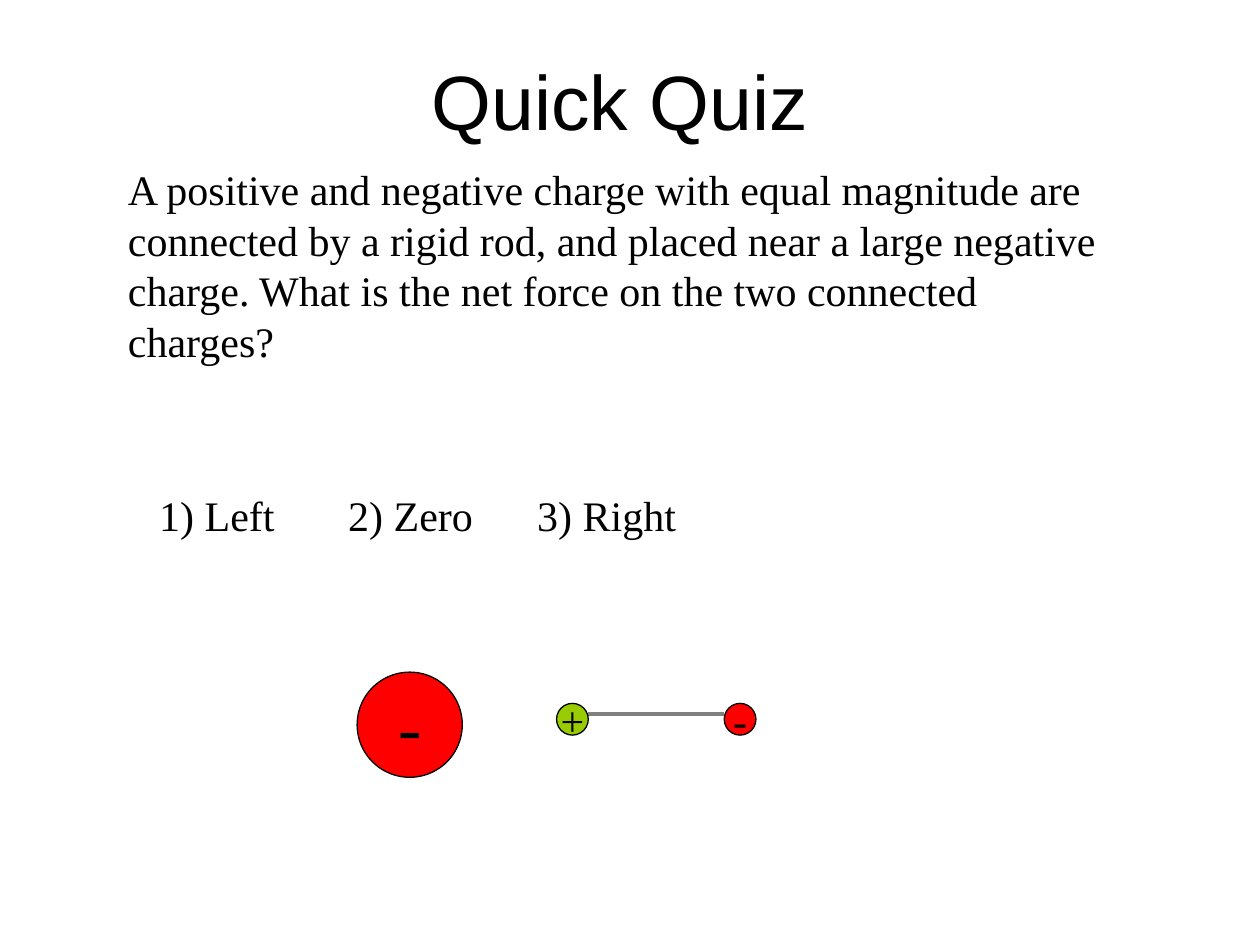
from lxml import etree
from pptx import Presentation
from pptx.dml.color import RGBColor
from pptx.enum.shapes import MSO_CONNECTOR, MSO_SHAPE
from pptx.enum.text import MSO_ANCHOR, PP_ALIGN
from pptx.oxml.ns import qn
from pptx.util import Cm, Pt

BLACK = RGBColor(0x00, 0x00, 0x00)
GRAY = RGBColor(0x80, 0x80, 0x80)
RED = RGBColor(0xFF, 0x00, 0x00)
GREEN = RGBColor(0x99, 0xCC, 0x00)

STRAIGHT = MSO_CONNECTOR.STRAIGHT
OVAL = MSO_SHAPE.OVAL
LEFT, CENTER = PP_ALIGN.LEFT, PP_ALIGN.CENTER
TOP, MIDDLE = MSO_ANCHOR.TOP, MSO_ANCHOR.MIDDLE

HEADING_FONT = "Arial"
BODY_FONT = "Times New Roman"


class QuizSlide:
    """Adds styled elements to one slide; lengths are in centimetres."""

    def __init__(self, slide):
        self.shapes = slide.shapes

    def fill_text(self, tf, text, size, font=BODY_FONT, align=LEFT, anchor=TOP, wrap=True):
        tf.word_wrap = wrap
        tf.vertical_anchor = anchor
        p = tf.paragraphs[0]
        p.alignment = align
        r = p.add_run()
        r.text = text
        r.font.size = Pt(size)
        r.font.name = font
        r.font.color.rgb = BLACK

    def text(self, x, y, w, h, text, size=24, **style):
        sp = self.shapes.add_textbox(Cm(x), Cm(y), Cm(w), Cm(h))
        self.fill_text(sp.text_frame, text, size, **style)

    def charge(self, x, y, d, sign, color, size=24):
        sp = self.shapes.add_shape(OVAL, Cm(x), Cm(y), Cm(d), Cm(d))
        sp.shadow.inherit = False
        sp.fill.solid()
        sp.fill.fore_color.rgb = color
        sp.line.color.rgb = BLACK
        sp.line.width = Pt(0.75)
        self.fill_text(sp.text_frame, sign, size, align=CENTER, anchor=MIDDLE, wrap=False)

    def rod(self, x1, x2, y):
        ln = self.shapes.add_connector(STRAIGHT, Cm(x1), Cm(y), Cm(x2), Cm(y))
        ln.line.color.rgb = GRAY
        ln.line.width = Pt(2.25)
        etree.SubElement(ln._element.spPr, qn("a:effectLst"))


def main():
    prs = Presentation()
    prs.slide_width, prs.slide_height = Cm(25.4), Cm(19.05)
    s = QuizSlide(prs.slides.add_slide(prs.slide_layouts[6]))

    s.text(1.7, 0.43, 21.59, 3.18, "Quick Quiz", 44,
           font=HEADING_FONT, align=CENTER, anchor=MIDDLE)

    small, rod_start, rod_end = 0.64, 11.86, 14.6
    s.rod(rod_start, rod_end, 14.4)
    s.charge(rod_start - small, 14.18, small, "+", GREEN)
    s.charge(rod_end, 14.18, small, "-", RED)
    s.charge(7.2, 13.55, 2.12, "-", RED, 40)

    s.text(2.33, 3.18, 20.32, 4.3,
           "A positive and negative charge with equal magnitude are connected by "
           "a rigid rod, and placed near a large negative charge. What is the net "
           "force on the two connected charges?")
    s.text(2.96, 9.74, 20.74, 1.27, "1) Left\t\t2) Zero\t\t3) Right")

    prs.save("out.pptx")


if __name__ == "__main__":
    main()
